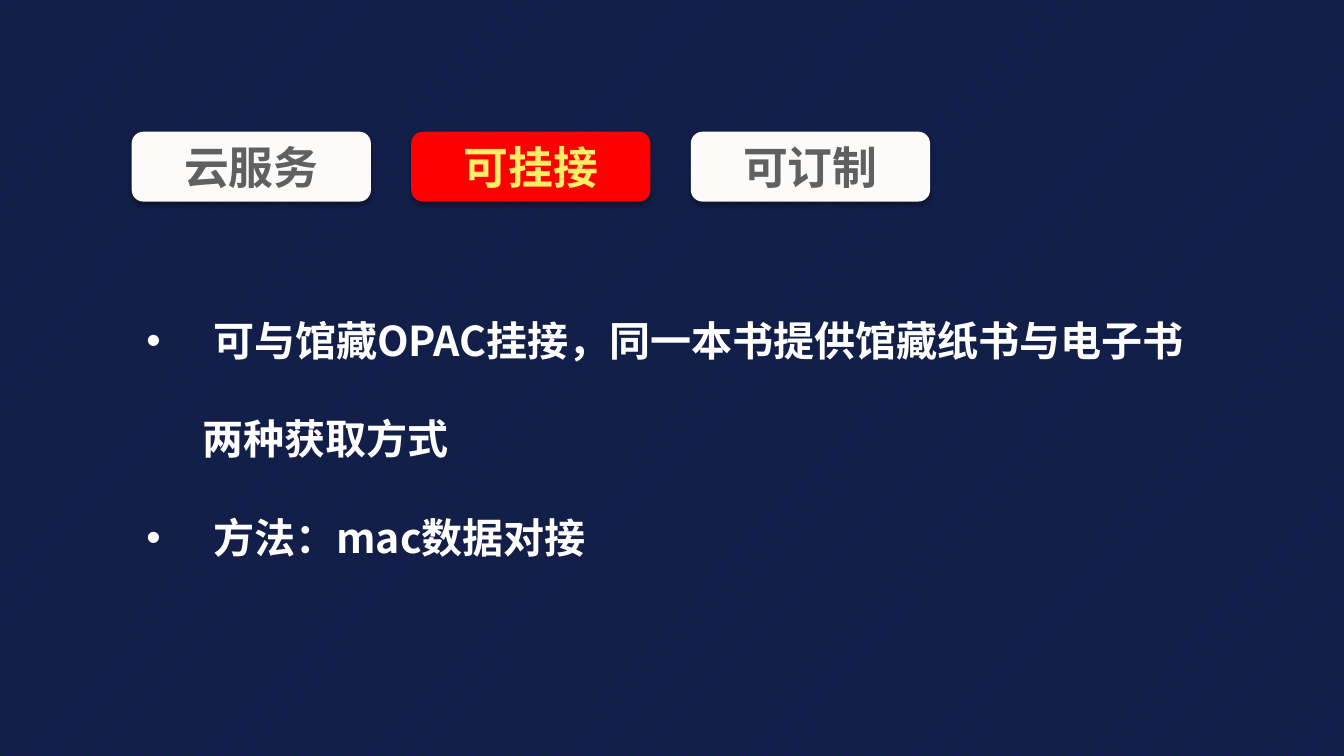
from dataclasses import dataclass

from lxml import etree
from pptx import Presentation
from pptx.dml.color import RGBColor
from pptx.enum.dml import MSO_PATTERN
from pptx.enum.shapes import MSO_SHAPE
from pptx.enum.text import MSO_ANCHOR, MSO_AUTO_SIZE, PP_ALIGN
from pptx.oxml.ns import qn
from pptx.util import Inches, Pt

ROUND = MSO_SHAPE.ROUNDED_RECTANGLE
STRIPES = MSO_PATTERN.DARK_UPWARD_DIAGONAL
MIDDLE = MSO_ANCHOR.MIDDLE
CENTER = PP_ALIGN.CENTER
GROW = MSO_AUTO_SIZE.SHAPE_TO_FIT_TEXT


@dataclass(frozen=True)
class Theme:
    font: str = "Noto Sans CJK SC"
    navy: str = "0F243E"
    stripe: str = "29008E"
    white: str = "FFFFFF"
    tab: str = "FCFBF9"
    label: str = "606060"
    hot_tab: str = "FF0000"
    hot_label: str = "FFED65"
    shade: str = "000000"
    tab_size: int = 24
    body_size: int = 22


THEME = Theme()
TABS = ["云服务", "可挂接", "可订制"]
ACTIVE = "可挂接"
POINTS = [
    ("可与馆藏OPAC挂接，同一本书提供馆藏纸书与电子书", "•"),
    ("两种获取方式", None),
    ("方法：mac数据对接", "•"),
]


def rgb(code):
    return RGBColor.from_string(code)


def put_text(para, text, *, size, color, align=None, space=None,
             left=0, hang=0, bullet=None):
    """Fill one paragraph; left and hang are inches."""
    props = para._p.get_or_add_pPr()
    props.set("marL", str(Inches(left)))
    props.set("indent", str(Inches(-hang)))
    if bullet:
        etree.SubElement(props, qn("a:buFont")).set("typeface", "Arial")
        etree.SubElement(props, qn("a:buChar")).set("char", bullet)
    else:
        etree.SubElement(props, qn("a:buNone"))
    para.alignment = align
    para.line_spacing = space
    run = para.add_run()
    run.text = text
    font = run.font
    font.size = Pt(size)
    font.bold = True
    font.color.rgb = rgb(color)
    font.name = THEME.font
    asian = etree.SubElement(run._r.get_or_add_rPr(), qn("a:ea"))
    asian.set("typeface", THEME.font)


def add_shadow(shape):
    shape.shadow.inherit = False
    effects = shape._element.spPr.find(qn("a:effectLst"))
    outer = etree.SubElement(
        effects, qn("a:outerShdw"), blurRad=str(Pt(3.1)),
        dist=str(Pt(1.8)), dir="5400000", rotWithShape="0")
    color = etree.SubElement(outer, qn("a:srgbClr"), val=THEME.shade)
    etree.SubElement(color, qn("a:alpha"), val="35000")


def add_tabs(slide, left, top, width, height, gap=0.3):
    wide = (width - gap * (len(TABS) - 1)) / len(TABS)
    for i, name in enumerate(TABS):
        hot = name == ACTIVE
        tab = slide.shapes.add_shape(
            ROUND, Inches(left + i * (wide + gap)), Inches(top),
            Inches(wide), Inches(height))
        tab.fill.solid()
        tab.fill.fore_color.rgb = rgb(THEME.hot_tab if hot else THEME.tab)
        tab.line.fill.background()
        add_shadow(tab)
        frame = tab.text_frame
        frame.vertical_anchor = MIDDLE
        put_text(frame.paragraphs[0], name, size=THEME.tab_size, align=CENTER,
                 color=THEME.hot_label if hot else THEME.label)


def add_points(slide, left, top, width, height):
    box = slide.shapes.add_textbox(
        Inches(left), Inches(top), Inches(width), Inches(height))
    frame = box.text_frame
    frame.word_wrap = True
    frame.auto_size = GROW
    for i, (text, bullet) in enumerate(POINTS):
        para = frame.add_paragraph() if i else frame.paragraphs[0]
        put_text(para, text, size=THEME.body_size, color=THEME.white,
                 space=2.0, bullet=bullet, left=0.5 if bullet else 0.42,
                 hang=0.5 if bullet else 0)


def main():
    deck = Presentation()
    deck.slide_width = Inches(10)
    deck.slide_height = deck.slide_width * 9 // 16
    slide = deck.slides.add_slide(deck.slide_layouts[6])
    back = slide.background.fill
    back.patterned()
    back.pattern = STRIPES
    back.fore_color.rgb = rgb(THEME.stripe)
    back.back_color.rgb = rgb(THEME.navy)
    add_tabs(slide, 0.98, 0.98, 5.94, 0.52)
    add_points(slide, 0.99, 1.93, 8.06, 2.32)
    deck.save("out.pptx")


if __name__ == "__main__":
    main()
